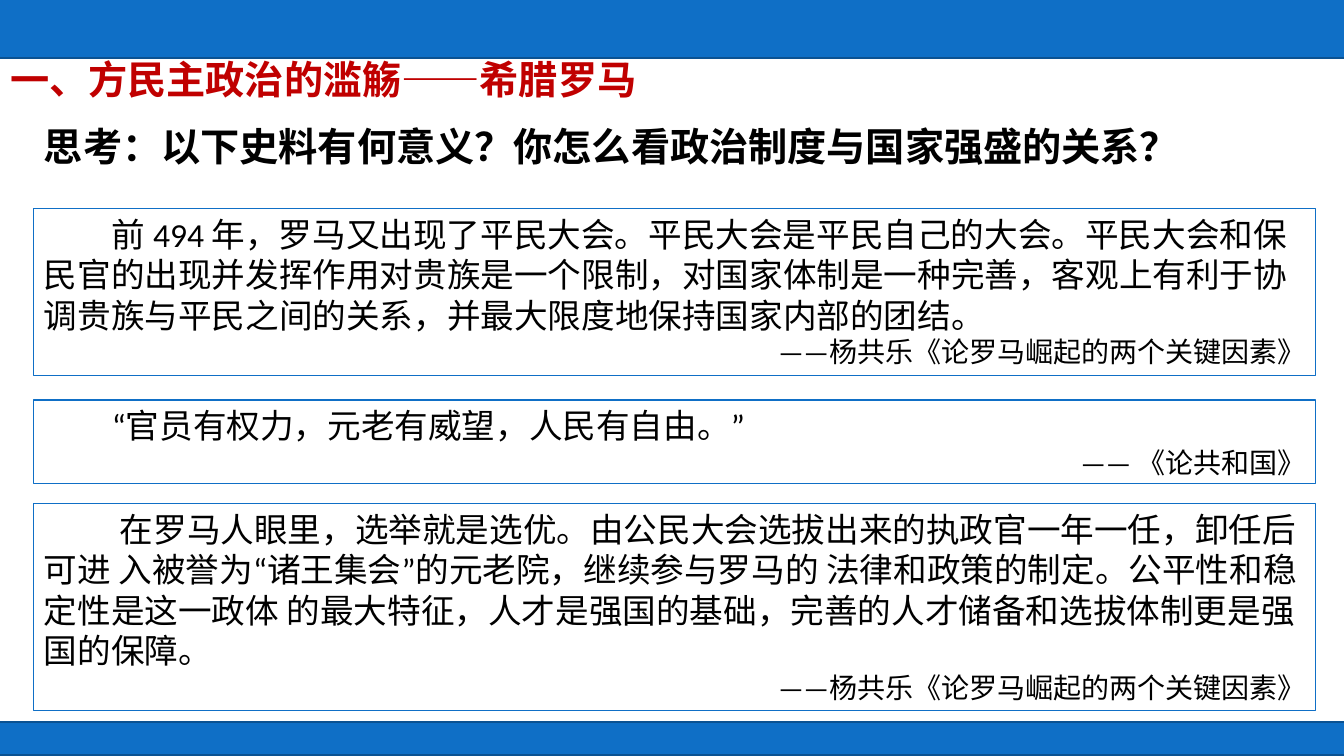
from lxml import etree
from pptx import Presentation
from pptx.dml.color import RGBColor
from pptx.enum.shapes import MSO_SHAPE
from pptx.enum.text import MSO_ANCHOR, MSO_AUTO_SIZE, PP_ALIGN
from pptx.oxml.ns import qn
from pptx.util import Pt

RECT = MSO_SHAPE.RECTANGLE
TOP, NO_FIT = MSO_ANCHOR.TOP, MSO_AUTO_SIZE.NONE
LEFT, RIGHT = PP_ALIGN.LEFT, PP_ALIGN.RIGHT

BLUE = RGBColor(0x0F, 0x6F, 0xC6)
DARK_BLUE = RGBColor(0x0B, 0x52, 0x92)
RED = RGBColor(0xC0, 0x00, 0x00)
BLACK = RGBColor(0x00, 0x00, 0x00)
CJK, LATIN = "Noto Sans CJK SC", "Calibri"


def px(*values):
    return [round(v * 914400 / 100.8) for v in values]


def write(p, text, size, color, font, bold=False, align=LEFT):
    p.text = text
    p.alignment = align
    r = p.runs[0]
    r.font.size, r.font.bold, r.font.name = Pt(size), bold, font
    r.font.color.rgb = color
    etree.SubElement(r.font._element, qn("a:ea")).set("typeface", font)


prs = Presentation()
prs.slide_width, prs.slide_height = px(1344, 756)
s = prs.slides.add_slide(prs.slide_layouts[5])

# Bands along the top and bottom edges
for top, height in ((-1, 59), (722, 33)):
    sp = s.shapes.add_shape(RECT, *px(-7, top, 1358, height))
    sp.shadow.inherit = False
    sp.fill.solid()
    sp.fill.fore_color.rgb = BLUE
    sp.line.color.rgb = DARK_BLUE
    sp.line.width = Pt(1)

# Title and question
title = s.shapes.title
title.left, title.top, title.width, title.height = px(0, 50, 656, 57)
question = s.shapes.add_textbox(*px(34, 117, 1245, 57))
for sp, text, color, wrap in (
    (title, "一、方民主政治的滥觞——希腊罗马", RED, False),
    (question, "思考：以下史料有何意义？你怎么看政治制度与国家强盛的关系？", BLACK, True),
):
    tf = sp.text_frame
    tf.word_wrap, tf.auto_size, tf.vertical_anchor = wrap, NO_FIT, TOP
    write(tf.paragraphs[0], text, 28, color, CJK, bold=True)

# Framed quotations: top, height, first-line indent, text, source
YANG = "——杨共乐《论罗马崛起的两个关键因素》"
QUOTES = (
    (209, 167, 68,
     "前 494 年，罗马又出现了平民大会。平民大会是平民自己的大会。"
     "平民大会和保民官的出现并发挥作用对贵族是一个限制，对国家体制是一种完善，"
     "客观上有利于协调贵族与平民之间的关系，并最大限度地保持国家内部的团结。", YANG),
    (400, 84, 68, "“官员有权力，元老有威望，人民有自由。”", "—— 《论共和国》"),
    (504, 207, 76,
     "在罗马人眼里，选举就是选优。由公民大会选拔出来的执政官一年一任，"
     "卸任后可进 入被誉为“诸王集会”的元老院，继续参与罗马的 法律和政策的制定。"
     "公平性和稳定性是这一政体 的最大特征，人才是强国的基础，"
     "完善的人才储备和选拔体制更是强国的保障。", YANG),
)
for top, height, indent, quote, source in QUOTES:
    sp = s.shapes.add_shape(RECT, *px(34, top, 1282, height))
    sp.shadow.inherit = False
    sp.fill.background()
    sp.line.color.rgb = BLUE
    sp.line.width = Pt(0.75)
    tf = sp.text_frame
    tf.word_wrap, tf.vertical_anchor = True, TOP
    p = tf.paragraphs[0]
    write(p, quote, 24, BLACK, LATIN)
    p._p.get_or_add_pPr().set("indent", str(px(indent)[0]))
    write(tf.add_paragraph(), source, 20, BLACK, LATIN, align=RIGHT)

prs.save("out.pptx")
